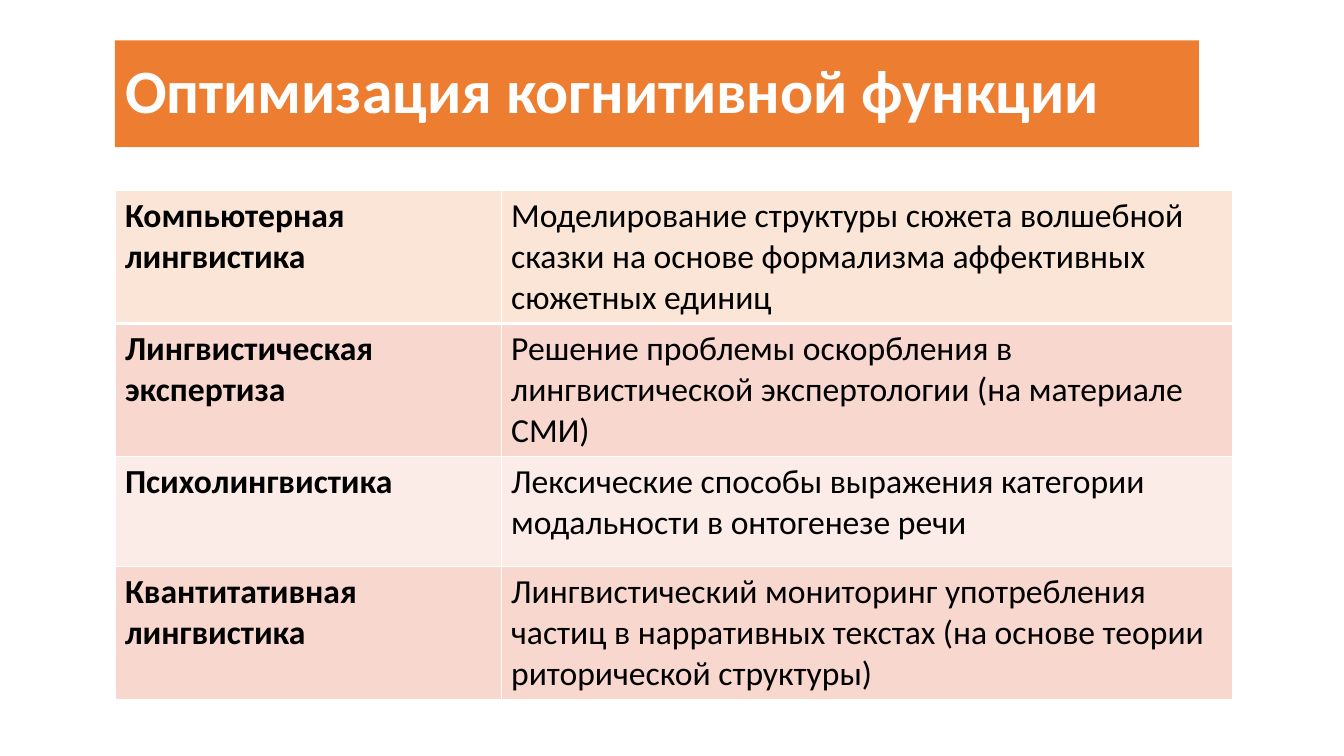
"""Build a slide with a title banner and a table of linguistic fields and topics."""
from lxml.etree import SubElement
from pptx import Presentation
from pptx.dml.color import RGBColor
from pptx.enum.text import MSO_ANCHOR, PP_ALIGN
from pptx.oxml.ns import qn
from pptx.util import Inches, Pt

THEME = {
    "font": "Calibri",
    "title_size": 44,
    "table_size": 24,
    "banner": "ED7D31",
    "white": "FFFFFF",
    "black": "000000",
    "row_fills": ["FBE5D6", "F8D7CE", "FCECE8", "F8D7CE"],
}
TOPICS = [
    ("Компьютерная лингвистика",
     "Моделирование структуры сюжета волшебной сказки на основе формализма аффективных сюжетных единиц"),
    ("Лингвистическая экспертиза",
     "Решение проблемы оскорбления в лингвистической экспертологии (на материале СМИ)"),
    ("Психолингвистика",
     "Лексические способы выражения категории модальности в онтогенезе речи"),
    ("Квантитативная лингвистика",
     "Лингвистический мониторинг употребления частиц в нарративных текстах (на основе теории риторической структуры)"),
]
COLUMN_WIDTHS = [3.83, 7.25]
ROW_HEIGHTS = [1.32, 1.32, 1.09, 1.32]
LEFT = 1.14


def write_text(text_frame, text, size, color, bold):
    paragraph = text_frame.paragraphs[0]
    paragraph.alignment = PP_ALIGN.LEFT
    run = paragraph.add_run()
    run.text = text
    font_format = {"name": THEME["font"], "size": Pt(size), "bold": bold}
    for name, value in font_format.items():
        setattr(run.font, name, value)
    run.font.color.rgb = RGBColor.from_string(color)
    return paragraph


def add_borders(cell, widths):
    properties = cell._tc.get_or_add_tcPr()
    for side, width in widths.items():
        line = SubElement(properties, qn(f"a:ln{side}"), w=str(Pt(width)))
        fill = SubElement(line, qn("a:solidFill"))
        SubElement(fill, qn("a:srgbClr"), val=THEME["white"])


presentation = Presentation()
presentation.slide_width = Inches(13.33)
presentation.slide_height = Inches(7.5)
slide = presentation.slides.add_slide(presentation.slide_layouts[5])

title = slide.shapes.title
title_box = {"left": LEFT, "top": 0.4, "width": 10.75, "height": 1.06}
for name, value in title_box.items():
    setattr(title, name, Inches(value))
title.fill.solid()
title.fill.fore_color.rgb = RGBColor.from_string(THEME["banner"])
title.text_frame.vertical_anchor = MSO_ANCHOR.MIDDLE
title_paragraph = write_text(title.text_frame, "Оптимизация когнитивной функции",
                             THEME["title_size"], THEME["white"], True)
title_paragraph.line_spacing = 0.9

table = slide.shapes.add_table(
    len(TOPICS), len(COLUMN_WIDTHS), Inches(LEFT), Inches(1.89),
    Inches(sum(COLUMN_WIDTHS)), Inches(sum(ROW_HEIGHTS))).table
for column, width in zip(table.columns, COLUMN_WIDTHS):
    column.width = Inches(width)
for row, height in zip(table.rows, ROW_HEIGHTS):
    row.height = Inches(height)

for row_index, (topic, row_fill) in enumerate(zip(TOPICS, THEME["row_fills"])):
    for column_index, text in enumerate(topic):
        cell = table.cell(row_index, column_index)
        add_borders(cell, {"L": 1, "R": 1,
                           "T": 3 if row_index == 1 else 1,
                           "B": 3 if row_index == 0 else 1})
        cell.fill.solid()
        cell.fill.fore_color.rgb = RGBColor.from_string(row_fill)
        write_text(cell.text_frame, text, THEME["table_size"], THEME["black"], column_index == 0)

presentation.save("out.pptx")
